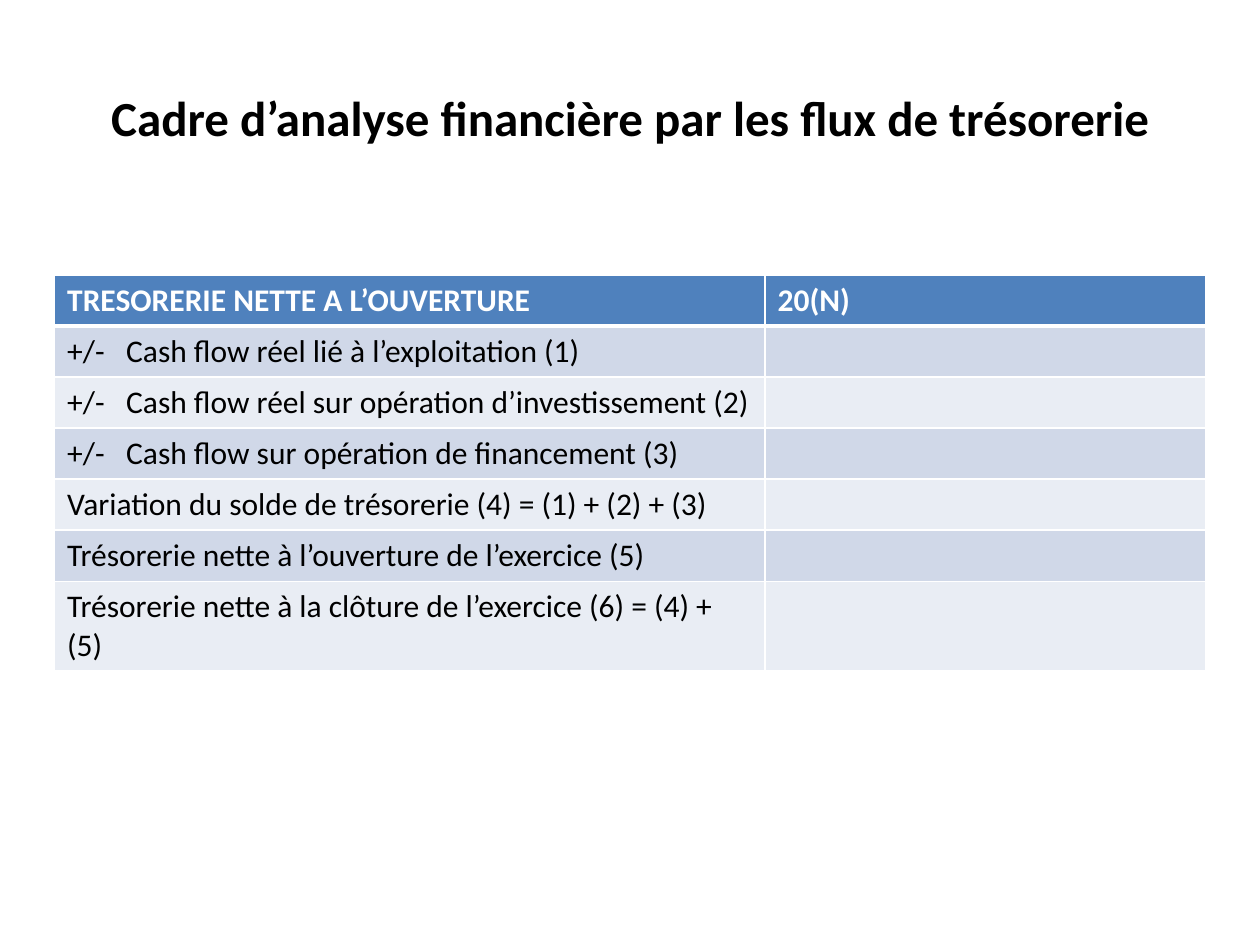
from dataclasses import dataclass

import pptx
import pptx.dml.color
import pptx.enum.text
import pptx.oxml
import pptx.oxml.ns
import pptx.util
from lxml import etree

Pt = pptx.util.Pt
WHITE = pptx.dml.color.RGBColor(0xFF, 0xFF, 0xFF)
BLACK = pptx.dml.color.RGBColor(0x00, 0x00, 0x00)
HEADER_BLUE = pptx.dml.color.RGBColor(0x4F, 0x81, 0xBD)
BAND_DARK = pptx.dml.color.RGBColor(0xD0, 0xD8, 0xE8)
BAND_LIGHT = pptx.dml.color.RGBColor(0xE9, 0xED, 0xF4)
FONT = "Calibri"
SIGN_INDENT = 33.7
COLUMN_WIDTHS = (406, 252)
ROW_HEIGHT = 29.2


@dataclass(frozen=True)
class FlowRow:
    label: str
    sign: str = ""
    value: str = ""


ROWS = (
    FlowRow("TRESORERIE NETTE A L’OUVERTURE", value="20(N)"),
    FlowRow("Cash flow réel lié à l’exploitation (1)", "+/-"),
    FlowRow("Cash flow réel sur opération d’investissement (2)", "+/-"),
    FlowRow("Cash flow sur opération de financement (3)", "+/-"),
    FlowRow("Variation du solde de trésorerie (4) = (1) + (2) + (3)"),
    FlowRow("Trésorerie nette à l’ouverture de l’exercice (5)"),
    FlowRow("Trésorerie nette à la clôture de l’exercice (6) = (4) + (5)"),
)


def add_span(para, text: str, size: float, color, bold: bool) -> None:
    span = para.add_run()
    span.text = text
    span.font.name = FONT
    span.font.size = Pt(size)
    span.font.bold = bold
    span.font.color.rgb = color


def add_border(cell, side: str, width: float) -> None:
    properties = cell._tc.get_or_add_tcPr()
    line = etree.SubElement(properties, pptx.oxml.ns.qn(f"a:{side}"), w=str(Pt(width)))
    fill = etree.SubElement(line, pptx.oxml.ns.qn("a:solidFill"))
    etree.SubElement(fill, pptx.oxml.ns.qn("a:srgbClr"), val=str(WHITE))


def add_sign_tab(para) -> None:
    properties = para._p.get_or_add_pPr()
    properties.set("marL", str(Pt(SIGN_INDENT)))
    properties.set("indent", str(-Pt(SIGN_INDENT)))
    tabs = etree.SubElement(properties, pptx.oxml.ns.qn("a:tabLst"))
    etree.SubElement(tabs, pptx.oxml.ns.qn("a:tab"), pos=str(Pt(SIGN_INDENT)), algn="l")


def fill_row(table, index: int, row: FlowRow) -> None:
    is_header = index == 0
    band = HEADER_BLUE if is_header else BAND_DARK if index % 2 else BAND_LIGHT
    label = f"{row.sign}\t{row.label}" if row.sign else row.label
    table.rows[index].height = Pt(ROW_HEIGHT)
    for column, text in enumerate((label, row.value)):
        cell = table.cell(index, column)
        widths = {"lnL": 1, "lnR": 1, "lnT": 3 if index == 1 else 1, "lnB": 3 if is_header else 1}
        for side, width in widths.items():
            add_border(cell, side, width)
        cell.fill.solid()
        cell.fill.fore_color.rgb = band
        para = cell.text_frame.paragraphs[0]
        if text:
            if "\t" in text:
                add_sign_tab(para)
            add_span(para, text, 18, WHITE if is_header else BLACK, is_header)


def add_title(page, text: str) -> None:
    box = page.shapes.title
    box.left, box.top, box.width, box.height = Pt(36), Pt(21.6), Pt(648), Pt(90)
    frame = box.text_frame
    frame.word_wrap = True
    frame.vertical_anchor = pptx.enum.text.MSO_ANCHOR.MIDDLE
    para = frame.paragraphs[0]
    para.alignment = pptx.enum.text.PP_ALIGN.CENTER
    add_span(para, text, 28, BLACK, True)


def add_flow_table(page) -> None:
    table = page.shapes.add_table(
        len(ROWS), len(COLUMN_WIDTHS), Pt(31.2), Pt(157),
        Pt(sum(COLUMN_WIDTHS)), Pt(ROW_HEIGHT * len(ROWS)),
    ).table
    for column, width in zip(table.columns, COLUMN_WIDTHS):
        column.width = Pt(width)
    for index, row in enumerate(ROWS):
        fill_row(table, index, row)


def main() -> None:
    deck = pptx.Presentation()
    deck.slide_width, deck.slide_height = Pt(720), Pt(540)
    page = deck.slides.add_slide(deck.slide_layouts[5])
    page.background.fill.solid()
    page.background.fill.fore_color.rgb = WHITE
    add_title(page, "Cadre d’analyse financière par les flux de trésorerie")
    add_flow_table(page)
    deck.save("out.pptx")


if __name__ == "__main__":
    main()
